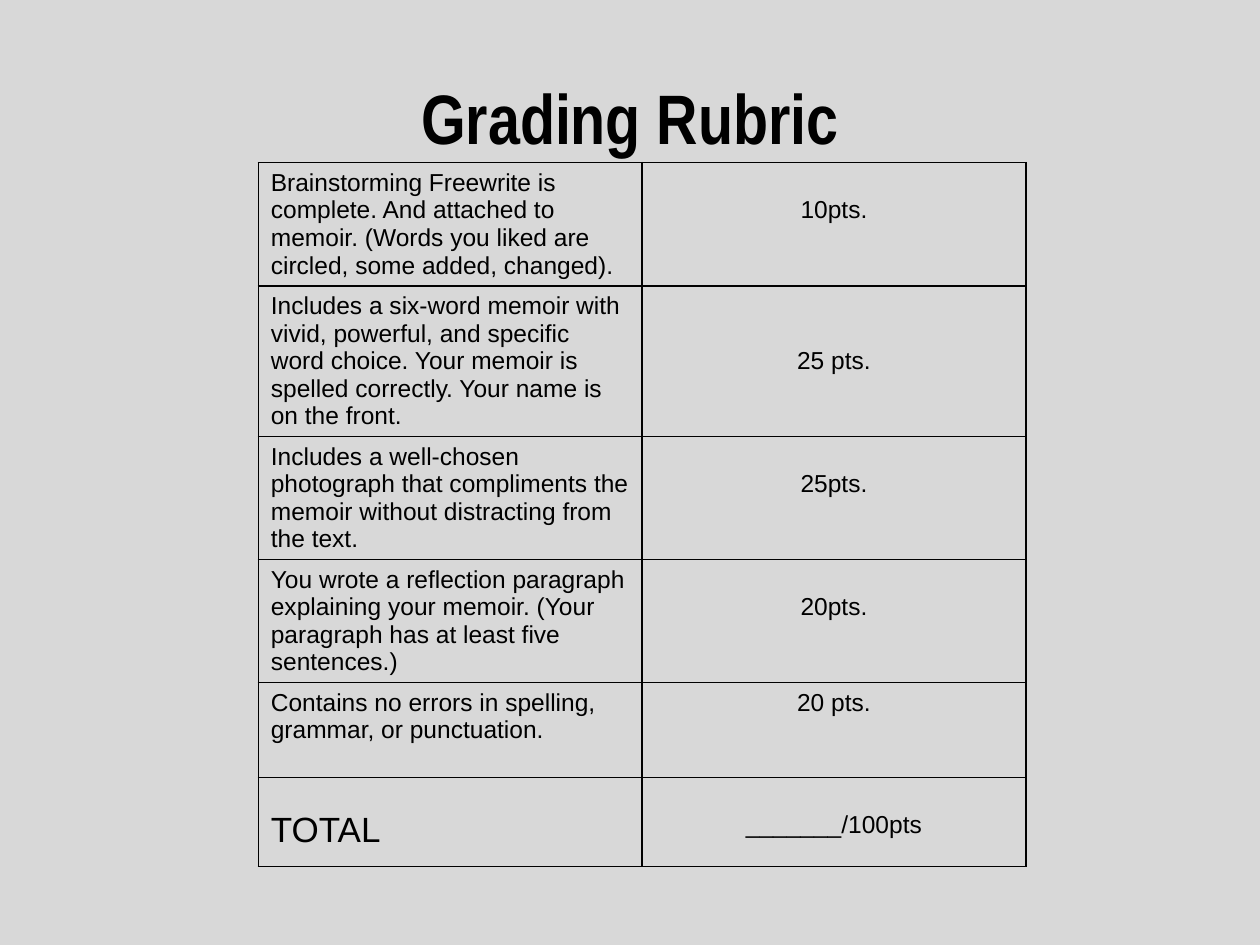
from lxml.etree import SubElement
from pptx import Presentation
from pptx.dml.color import RGBColor
from pptx.enum.text import MSO_ANCHOR, MSO_AUTO_SIZE, PP_ALIGN
from pptx.oxml.ns import qn
from pptx.util import Cm, Pt

COLORS = {"background": "D8D8D8", "ink": "000000"}
LINE_HEIGHT = 0.55  # one 14 pt line, in cm
PADDING = 0.13

# Criterion, points, lines left free above the points, row height in cm
CRITERIA = [
    ("Brainstorming Freewrite is complete. And attached to memoir. "
     "(Words you liked are circled, some added, changed).", "10pts.", 1, 2.48),
    ("Includes a six-word memoir with vivid, powerful, and specific word choice. "
     "Your memoir is spelled correctly. Your name is on the front.", "25 pts.", 2, 3.02),
    ("Includes a well-chosen photograph that compliments the memoir "
     "without distracting from the text.", "25pts.", 1, 2.48),
    ("You wrote a reflection paragraph explaining your memoir. "
     "(Your paragraph has at least five sentences.)", "20pts.", 1, 2.48),
    ("Contains no errors in spelling, grammar, or punctuation.", "20 pts.", 0, 1.91),
    ("TOTAL", "_______/100pts", 1, 1.8),
]


def assign(target, values):
    for name, value in values.items():
        setattr(target, name, value)


class RubricSlide:
    body = {"name": "Arial", "size": Pt(14)}
    heading = {"name": "Arial Narrow", "size": Pt(40), "bold": True}
    total = {"name": "Arial", "size": Pt(20)}

    def __init__(self, deck):
        self.page = deck.slides.add_slide(deck.slide_layouts[5])
        fill = self.page.background.fill
        fill.solid()
        fill.fore_color.rgb = RGBColor.from_string(COLORS["background"])

    def add_text(self, frame, text, style, align):
        para = frame.paragraphs[0]
        para.alignment = align
        span = para.add_run()
        span.text = text
        assign(span.font, style)
        span.font.color.rgb = RGBColor.from_string(COLORS["ink"])

    def title(self, text, left, top, width, height):
        box = self.page.shapes.title
        assign(box, {"left": Cm(left), "top": Cm(top),
                     "width": Cm(width), "height": Cm(height)})
        assign(box.text_frame, {"word_wrap": True, "auto_size": MSO_AUTO_SIZE.NONE,
                                "vertical_anchor": MSO_ANCHOR.MIDDLE})
        self.add_text(box.text_frame, text, self.heading, PP_ALIGN.CENTER)

    def border(self, cell):
        properties = cell._tc.get_or_add_tcPr()
        for side in ("a:lnL", "a:lnR", "a:lnT", "a:lnB"):
            line = SubElement(properties, qn(side), w=str(Pt(1)))
            solid = SubElement(line, qn("a:solidFill"))
            SubElement(solid, qn("a:srgbClr"), val=COLORS["ink"])

    def cell(self, cell, text, style, align, free_lines):
        self.border(cell)
        cell.fill.background()
        assign(cell, {"margin_left": Cm(0.25), "margin_right": Cm(0.25),
                      "margin_top": Cm(PADDING + free_lines * LINE_HEIGHT),
                      "margin_bottom": Cm(PADDING),
                      "vertical_anchor": MSO_ANCHOR.TOP})
        self.add_text(cell.text_frame, text, style, align)

    def rubric(self, criteria, left, top, width):
        height = sum(row[-1] for row in criteria)
        table = self.page.shapes.add_table(
            len(criteria), 2, Cm(left), Cm(top), Cm(width), Cm(height)).table
        assign(table, {"first_row": False, "horz_banding": False})
        for index, (criterion, points, free_lines, row_height) in enumerate(criteria):
            table.rows[index].height = Cm(row_height)
            is_total = index == len(criteria) - 1
            self.cell(table.cell(index, 0), criterion,
                      self.total if is_total else self.body,
                      PP_ALIGN.LEFT, int(is_total))
            self.cell(table.cell(index, 1), points, self.body,
                      PP_ALIGN.CENTER, free_lines)


def main():
    deck = Presentation()
    assign(deck, {"slide_width": Cm(25.4), "slide_height": Cm(19.05)})
    slide = RubricSlide(deck)
    # Heading
    slide.title("Grading Rubric", 1.27, 0.76, 22.86, 3.18)
    # Criteria and points
    slide.rubric(CRITERIA, 5.21, 3.28, 15.47)
    deck.save("out.pptx")


if __name__ == "__main__":
    main()
